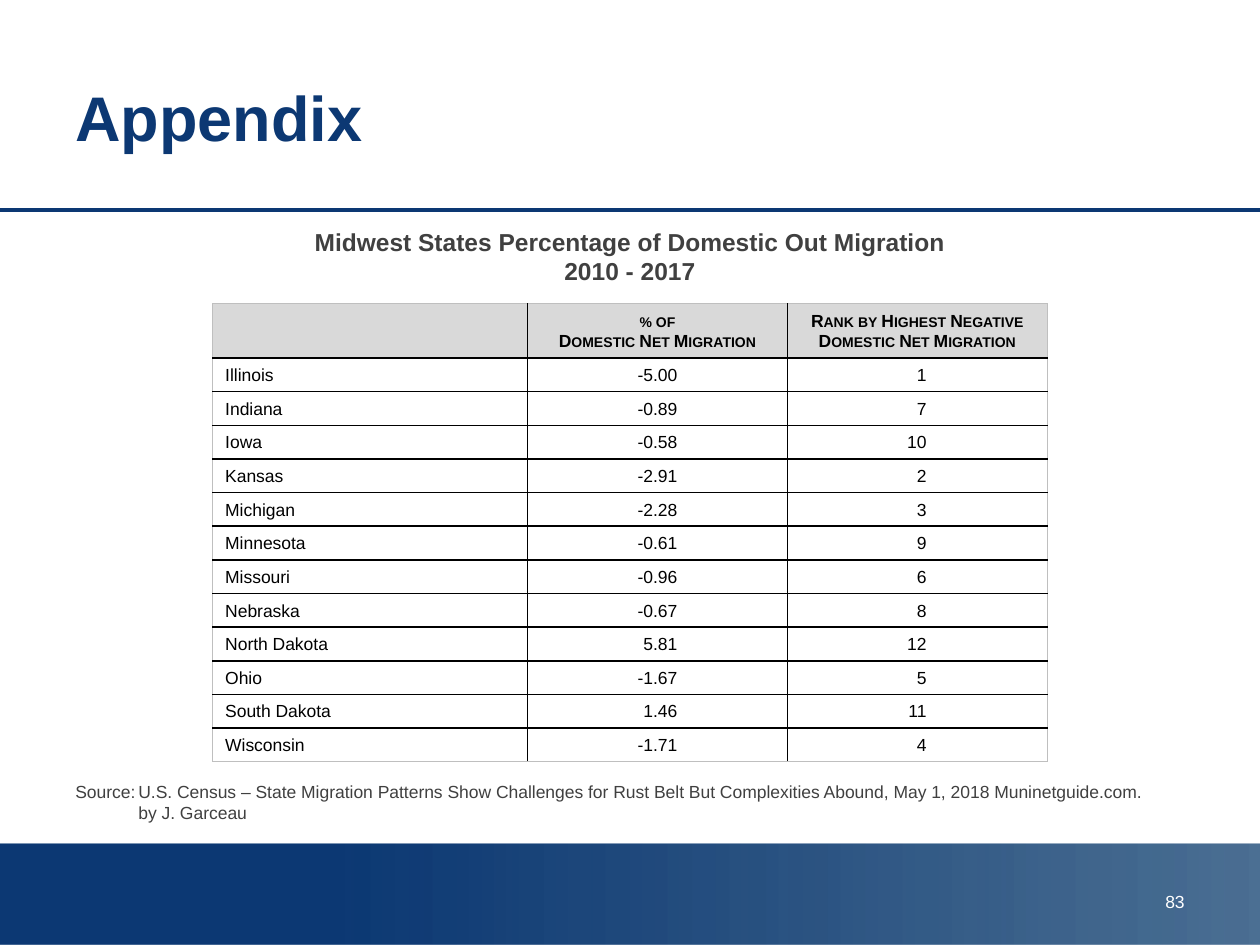
from copy import deepcopy

from lxml.etree import SubElement as Sub
from pptx import Presentation
from pptx.dml.color import RGBColor as RGB
from pptx.enum.shapes import MSO_CONNECTOR as Conn, MSO_SHAPE as Shape
from pptx.enum.text import MSO_ANCHOR as Anchor, PP_ALIGN as Align
from pptx.oxml.ns import qn
from pptx.util import Pt

NAVY = RGB(0x0C, 0x38, 0x73)
DEEP = RGB(0x00, 0x33, 0x66)
DARK = RGB(0x40, 0x40, 0x40)
BLACK = RGB(0, 0, 0)
WHITE = RGB(255, 255, 255)
GREY = RGB(0xD9, 0xD9, 0xD9)
EDGE = RGB(0xBF, 0xBF, 0xBF)

HEADS = [
    "",
    "% of\vDomestic Net Migration",
    "Rank by Highest Negative\vDomestic Net Migration",
]
STATES = [
    ("Illinois", "-5.00", "1"),
    ("Indiana", "-0.89", "7"),
    ("Iowa", "-0.58", "10"),
    ("Kansas", "-2.91", "2"),
    ("Michigan", "-2.28", "3"),
    ("Minnesota", "-0.61", "9"),
    ("Missouri", "-0.96", "6"),
    ("Nebraska", "-0.67", "8"),
    ("North Dakota", "5.81", "12"),
    ("Ohio", "-1.67", "5"),
    ("South Dakota", "1.46", "11"),
    ("Wisconsin", "-1.71", "4"),
]
WIDTHS = [180, 148.5, 148.5]
PADS = [7.2, 63, 69]  # right margins that line up the figures
HEAD_H, ROW_H = 31.2, 19.2


def write(frame, text, size=10, color=BLACK, bold=False, align=Align.LEFT,
          lead=None, hang=0, caps=False):
    """Put one formatted paragraph in a text frame; \\v breaks the line."""
    para = frame.paragraphs[0]
    para.text = text
    para.alignment = align
    if lead:
        para.line_spacing = Pt(lead)
    if hang:
        props = para._p.get_or_add_pPr()
        props.set("marL", str(Pt(hang)))
        props.set("indent", str(-Pt(hang)))
    for run in para.runs:
        font = run.font
        font.name, font.size, font.bold = "Arial", Pt(size), bold
        font.color.rgb = color
        if caps:
            run._r.rPr.set("cap", "small")
    # Line breaks take the format of the text around them
    for mark in para._p.findall(qn("a:br")):
        mark.insert(0, deepcopy(para.runs[0]._r.rPr))


def add_text(slide, box, text, anchor=Anchor.TOP, **form):
    frame = slide.shapes.add_textbox(*map(Pt, box)).text_frame
    frame.word_wrap = True
    frame.vertical_anchor = anchor
    write(frame, text, **form)


def add_band(slide):
    band = slide.shapes.add_shape(Shape.RECTANGLE, 0, Pt(482), Pt(720), Pt(58))
    band.shadow.inherit = False
    band.line.fill.background()
    band.fill.gradient()
    band.fill.gradient_angle = 0
    first, last = band.fill.gradient_stops
    first.color.rgb, first.position = NAVY, 0.25
    last.color.rgb, last.position = DEEP, 1
    tint = band._element.spPr.findall(".//" + qn("a:srgbClr"))[-1]
    Sub(tint, qn("a:alpha"), val="70000")


def add_rule(slide, top):
    rule = slide.shapes.add_connector(Conn.STRAIGHT, 0, Pt(top), Pt(720), Pt(top))
    rule.line.color.rgb = NAVY
    rule.line.width = Pt(2)
    Sub(rule._element.spPr, qn("a:effectLst"))


def set_edges(cell, outer):
    """Draw the four cell borders; sides in outer lie on the table's rim."""
    props = cell._tc.get_or_add_tcPr()
    for side in "LRTB":
        color, width = (EDGE, 0.5) if side in outer else (BLACK, 1)
        line = Sub(props, qn("a:ln" + side), w=str(Pt(width)))
        Sub(Sub(line, qn("a:solidFill")), qn("a:srgbClr"), val=str(color))


def add_grid(slide, left, top):
    rows = [HEADS, *STATES]
    high = HEAD_H + ROW_H * len(STATES)
    grid = slide.shapes.add_table(len(rows), len(WIDTHS), Pt(left), Pt(top),
                                  Pt(sum(WIDTHS)), Pt(high)).table
    for col, width in zip(grid.columns, WIDTHS):
        col.width = Pt(width)
    for r, row in enumerate(rows):
        head = r == 0
        grid.rows[r].height = Pt(HEAD_H if head else ROW_H)
        for c, text in enumerate(row):
            cell = grid.cell(r, c)
            rim = {"L": c == 0, "R": c == len(WIDTHS) - 1,
                   "T": head, "B": r == len(STATES)}
            set_edges(cell, [side for side in rim if rim[side]])
            cell.vertical_anchor = Anchor.BOTTOM
            if head:
                cell.fill.solid()
                cell.fill.fore_color.rgb = GREY
                align = Align.CENTER
            else:
                cell.fill.background()
                cell.margin_right = Pt(PADS[c])
                align = Align.RIGHT if c else Align.LEFT
            write(cell.text_frame, text, bold=head, caps=head,
                  align=align, lead=12)


def main():
    deck = Presentation()
    deck.slide_width, deck.slide_height = Pt(720), Pt(540)
    slide = deck.slides.add_slide(deck.slide_layouts[6])

    # Frame of the page
    add_band(slide)
    add_rule(slide, 120)
    add_text(slide, (36, 21.6, 648, 90), "Appendix", anchor=Anchor.MIDDLE,
             size=36, color=NAVY, bold=True)
    add_text(slide, (516, 505.5, 168, 28.8), "83", color=WHITE,
             align=Align.RIGHT)

    # Table with its heading and source
    add_text(slide, (36, 126, 648, 42),
             "Midwest States Percentage of Domestic Out Migration\v2010 - 2017",
             size=14, color=DARK, bold=True, align=Align.CENTER)
    add_grid(slide, 121.5, 173.4)
    add_text(slide, (36, 442.7, 648, 32),
             "Source:\tU.S. Census – State Migration Patterns Show Challenges "
             "for Rust Belt But Complexities Abound, May 1, 2018 "
             "Muninetguide.com.\vby J. Garceau", color=DARK, hang=36)

    deck.save("out.pptx")


if __name__ == "__main__":
    main()
